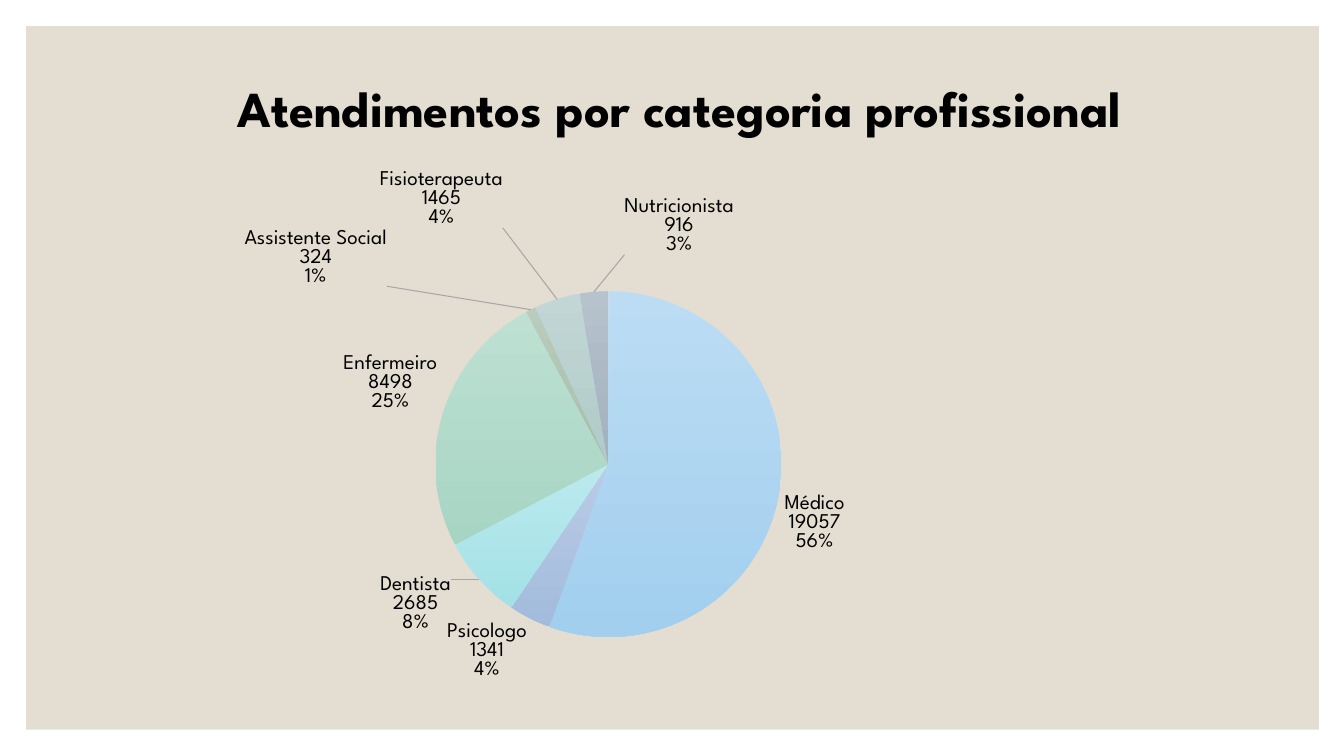
from dataclasses import dataclass

from lxml.etree import SubElement
from pptx import Presentation
from pptx.chart.data import CategoryChartData
from pptx.dml.color import RGBColor
from pptx.enum.chart import XL_CHART_TYPE, XL_LABEL_POSITION
from pptx.enum.shapes import MSO_SHAPE
from pptx.enum.text import MSO_ANCHOR, PP_ALIGN
from pptx.oxml.ns import qn
from pptx.util import Inches, Pt


@dataclass(frozen=True)
class Theme:
    """Colours, font and type sizes."""
    panel: str = "E3DED1"
    ink: str = "000000"
    leader: str = "A6A6A6"
    font: str = "League Spartan"
    title_size: int = 36
    label_size: int = 15


THEME = Theme()
WIDTH, HEIGHT = 13.33, 7.5
PANEL_BOX = (0.26, 0.26, 12.82, 6.98)
TITLE_BOX = (0.61, 0.7, 12.26, 0.81)
CHART_BOX = (0.46, 1.3, 12.72, 5.82)
PIE_BOX = (1.16, 1.59, 8.83, 3.43)

VISITS = {
    "Médico": (19057, "BCDCF4", "A2CFEE"),
    "Psicologo": (1341, "BACCE6", "A3BBDC"),
    "Dentista": (2685, "BBEAEE", "A3E1E6"),
    "Enfermeiro": (8498, "BDE0D2", "A7D5C4"),
    "Assistente Social": (324, "BACCBD", "A6BDAB"),
    "Fisioterapeuta": (1465, "C2D7D5", "AFCAC8"),
    "Nutricionista": (916, "B6C2CC", "A2B1BE"),
}
LABEL_SHIFTS = {
    "Dentista": (-0.24, -0.07),
    "Assistente Social": (-1.4, -0.18),
    "Fisioterapeuta": (-0.52, -0.65),
    "Nutricionista": (0.85, -0.31),
}


def style_font(font, size, bold=False):
    """Apply the theme's face and ink to a font."""
    for name, value in {"name": THEME.font, "size": Pt(size), "bold": bold}.items():
        setattr(font, name, value)
    font.color.rgb = RGBColor.from_string(THEME.ink)


def add_panel(slide, box):
    """Place the beige panel behind the content."""
    panel = slide.shapes.add_shape(MSO_SHAPE.RECTANGLE, *map(Inches, box))
    panel.shadow.inherit = False
    panel.fill.solid()
    panel.fill.fore_color.rgb = RGBColor.from_string(THEME.panel)
    panel.line.fill.background()


def add_title(slide, box, wording):
    """Place the centred slide title."""
    frame = slide.shapes.add_textbox(*map(Inches, box)).text_frame
    frame.word_wrap = True
    frame.vertical_anchor = MSO_ANCHOR.MIDDLE
    heading = frame.paragraphs[0]
    heading.alignment = PP_ALIGN.CENTER
    heading.line_spacing = 0.9
    run = heading.add_run()
    run.text = wording
    style_font(run.font, THEME.title_size, bold=True)


def set_layout(parent, position, values):
    """Insert a manual chart layout at a child position."""
    for old in parent.findall(qn("c:layout")):
        parent.remove(old)
    layout = SubElement(parent, qn("c:layout"))
    manual = SubElement(layout, qn("c:manualLayout"))
    for tag, value in values.items():
        SubElement(manual, qn(f"c:{tag}")).set("val", str(value))
    parent.insert(position, layout)


def fill_slices(series):
    """Give each slice its vertical gradient."""
    for index, (_, top, bottom) in enumerate(VISITS.values()):
        look = series.points[index].format
        look.fill.gradient()
        look.fill.gradient_angle = 270
        for stop, colour in zip(look.fill.gradient_stops, (top, bottom)):
            stop.color.rgb = RGBColor.from_string(colour)
        look.line.fill.background()


def label_slices(series, chart_size):
    """Show name, value and share, shifting the crowded labels."""
    labels = series.data_labels
    for name, value in {"show_category_name": True, "show_value": True,
                        "show_percentage": True,
                        "position": XL_LABEL_POSITION.OUTSIDE_END}.items():
        setattr(labels, name, value)
    style_font(labels.font, THEME.label_size)

    names = list(VISITS)
    for name in LABEL_SHIFTS:
        label = series.points[names.index(name)].data_label
        label.position = XL_LABEL_POSITION.OUTSIDE_END
        style_font(label.font, THEME.label_size)

    group = series._element.find(qn("c:dLbls"))
    shifted = group.findall(qn("c:dLbl"))
    for node, shift in zip(shifted, LABEL_SHIFTS.values()):
        x, y = (part / whole for part, whole in zip(shift, chart_size))
        set_layout(node, 1, {"x": x, "y": y})
        for tag in ("c:showCatName", "c:showPercent"):
            node.find(qn(tag)).set("val", "1")
    for node in (group, *shifted):
        separator = SubElement(node, qn("c:separator"))
        separator.text = "\n"
        node.find(qn("c:showBubbleSize")).addnext(separator)

    leaders = SubElement(group, qn("c:leaderLines"))
    line = SubElement(SubElement(leaders, qn("c:spPr")), qn("a:ln"), w="9525")
    paint = SubElement(line, qn("a:solidFill"))
    SubElement(paint, qn("a:srgbClr")).set("val", THEME.leader)


def add_visits_pie(slide, box):
    """Place the pie of visits by profession."""
    visits = CategoryChartData()
    visits.categories = list(VISITS)
    visits.add_series("Series 1", [count for count, *_ in VISITS.values()])
    chart = slide.shapes.add_chart(XL_CHART_TYPE.PIE, *map(Inches, box), visits).chart
    chart.has_legend = False
    chart.has_title = False
    style_font(chart.font, 10)
    pie = chart.plots[0]
    pie.vary_by_categories = True
    chart_size = box[2:]
    x, y, w, h = (part / whole for part, whole in zip(PIE_BOX, chart_size * 2))
    plot_area = chart._chartSpace.find(".//" + qn("c:plotArea"))
    set_layout(plot_area, 0, {"layoutTarget": "inner", "xMode": "edge", "yMode": "edge",
                              "x": x, "y": y, "w": w, "h": h})
    fill_slices(pie.series[0])
    label_slices(pie.series[0], chart_size)


def main():
    """Build and save the slide."""
    deck = Presentation()
    deck.slide_width, deck.slide_height = Inches(WIDTH), Inches(HEIGHT)
    slide = deck.slides.add_slide(deck.slide_layouts[6])
    add_panel(slide, PANEL_BOX)
    add_title(slide, TITLE_BOX, "Atendimentos por categoria profissional")
    add_visits_pie(slide, CHART_BOX)
    deck.save("out.pptx")


if __name__ == "__main__":
    main()
